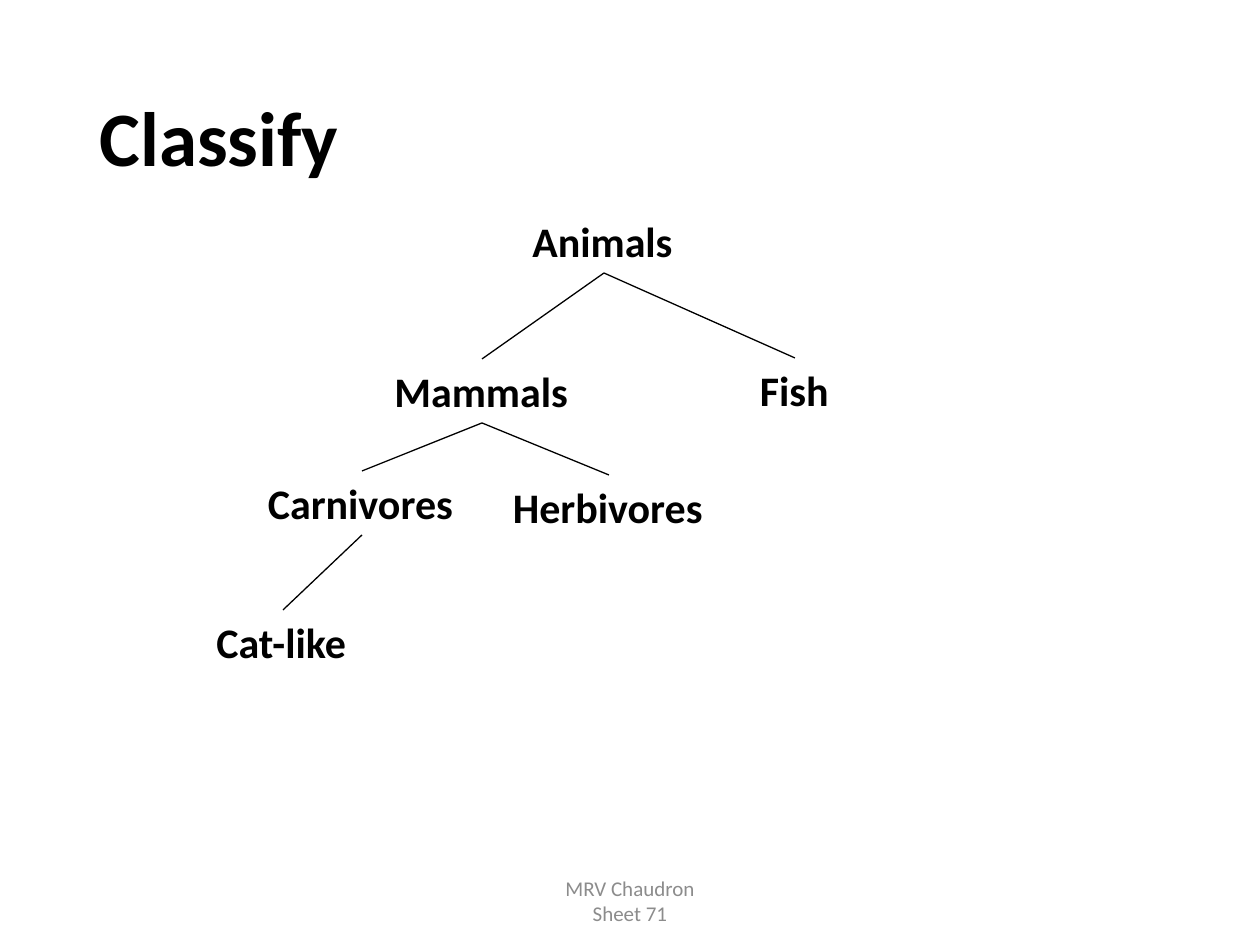
from pptx import Presentation
from pptx.dml.color import RGBColor
from pptx.enum import shapes, text
from pptx.util import Pt

PX = 914400 // 126
BLACK = RGBColor(0x00, 0x00, 0x00)
GREY = RGBColor(0x8C, 0x8C, 0x8C)

TITLE = "Classify"
FOOTER = ["MRV Chaudron", "Sheet 71"]
# name: (centre x, top, width, parent)
TREE = {
    "Animals": (604, 209, 168, None),
    "Mammals": (482, 359, 200, "Animals"),
    "Fish": (795, 358, 95, "Animals"),
    "Carnivores": (362, 471, 213, "Mammals"),
    "Cat-like": (283, 610, 158, "Carnivores"),
    "Herbivores": (609, 475, 217, "Mammals"),
}
NODE_H = 64
TOP, BOTTOM = 0, 2  # connection sites of a box

HEAD = dict(name="Calibri", size=Pt(44), bold=True)
NODE = dict(name="Calibri", size=Pt(24), bold=True)
FOOT = dict(name="Calibri", size=Pt(12), bold=False)


def scale(*nums):
    return [n * PX for n in nums]


def write(frame, lines, style, color, align):
    frame.text = "\n".join(lines)
    for para in frame.paragraphs:
        para.alignment = align
        for run in para.runs:
            for key, value in style.items():
                setattr(run.font, key, value)
            run.font.color.rgb = color


def link(slide, start, end):
    """Join the bottom of one box to the top of another."""
    line = slide.shapes.add_connector(shapes.MSO_CONNECTOR.STRAIGHT, 0, 0, 0, 0)
    line.begin_connect(start, BOTTOM)
    line.end_connect(end, TOP)
    line.line.color.rgb = BLACK
    line.line.width = Pt(0.75)
    props = line._element.spPr
    props.append(props.makeelement(
        "{http://schemas.openxmlformats.org/drawingml/2006/main}effectLst", {}))


def main():
    deck = Presentation()
    deck.slide_width, deck.slide_height = scale(1260, 945)
    slide = deck.slides.add_slide(deck.slide_layouts[5])
    left, mid = text.PP_ALIGN.LEFT, text.PP_ALIGN.CENTER

    title = slide.shapes.title
    title.left, title.top, title.width, title.height = scale(87, 50, 1086, 183)
    write(title.text_frame, [TITLE], HEAD, BLACK, left)
    title.text_frame.vertical_anchor = text.MSO_ANCHOR.MIDDLE
    title.text_frame.paragraphs[0].line_spacing = 0.9

    foot = slide.shapes.add_textbox(*scale(417, 876, 426, 50)).text_frame
    foot.word_wrap = True
    foot.vertical_anchor = text.MSO_ANCHOR.MIDDLE
    write(foot, FOOTER, FOOT, GREY, mid)

    boxes = {}
    for name, (x, y, w, _) in TREE.items():
        box = slide.shapes.add_textbox(*scale(x - w / 2, y, w, NODE_H))
        box.text_frame.word_wrap = False
        box.text_frame.auto_size = text.MSO_AUTO_SIZE.SHAPE_TO_FIT_TEXT
        write(box.text_frame, [name], NODE, BLACK, left)
        boxes[name] = box

    for name, (*_, parent) in TREE.items():
        if parent:
            link(slide, boxes[parent], boxes[name])

    deck.save("out.pptx")


if __name__ == "__main__":
    main()
